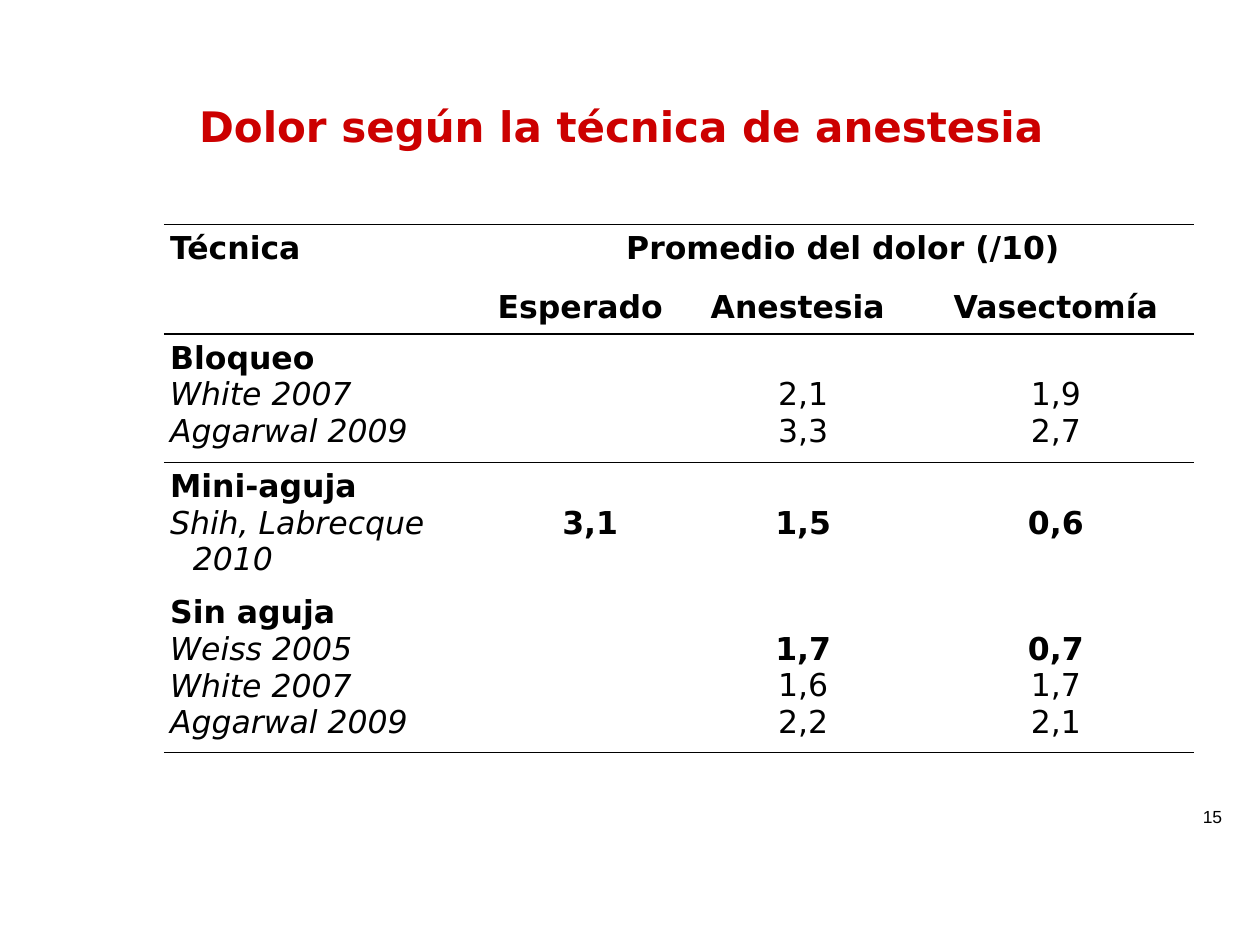
import pptx
import pptx.util
import pptx.dml.color
import pptx.enum.text
import pptx.oxml
import pptx.oxml.ns

Inches, Pt = pptx.util.Inches, pptx.util.Pt
ALIGN = pptx.enum.text.PP_ALIGN
ANCHOR = pptx.enum.text.MSO_ANCHOR

TITLE = "Dolor según la técnica de anestesia"
PAGE = "15"
COLORS = {"title": "CC0000", "text": "000000", "cell": "FFFFFF", "rule": "000000"}
FONT = "DejaVu Sans"
NO_STYLE = "{2D5ABB26-0587-4C30-8999-92F81FD0307C}"
PAD, HANG, LINE = 0.05, 0.18, 0.29

HEADS = [
    ["Técnica", "Promedio del dolor (/10)"],
    ["", "Esperado", "Anestesia ", "Vasectomía"],
]
# Technique, its studies, then the lists of expected, anesthesia and vasectomy
# scores; a star marks a bold score.
GROUPS = [
    ("Bloqueo", ["White 2007", "Aggarwal 2009"],
     [[], ["2,1", "3,3"], ["1,9", "2,7"]]),
    ("Mini-aguja", ["Shih, Labrecque 2010"],
     [["3,1*"], ["1,5*"], ["0,6*"]]),
    ("Sin aguja", ["Weiss 2005", "White 2007", "Aggarwal 2009"],
     [[], ["1,7*", "1,6", "2,2"], ["0,7*", "1,7", "2,1"]]),
]
COLS = [2.6, 1.57, 1.81, 2.2]
ROWS = [0.47, 0.4, 1.02, 1, 1.3]


def color(name):
    return pptx.dml.color.RGBColor.from_string(COLORS[name])


def pad(box):
    box.margin_left = box.margin_right = Inches(PAD)
    box.margin_top = box.margin_bottom = Inches(PAD)


def add_run(para, text, size, tint="text", face=FONT, bold=False, slant=False):
    run = para.add_run()
    run.text = text
    font = run.font
    font.name, font.size = face, Pt(size)
    font.bold, font.italic = bold, slant
    font.color.rgb = color(tint)


def fill_cell(cell, lines, align=ALIGN.CENTER):
    """Write (text, bold, italic) lines, each with a hanging indent."""
    frame = cell.text_frame
    for i, (text, bold, slant) in enumerate(lines):
        para = frame.add_paragraph() if i else frame.paragraphs[0]
        para.alignment = align
        props = para._p.get_or_add_pPr()
        props.set("marL", str(Inches(HANG)))
        props.set("indent", str(-Inches(HANG)))
        add_run(para, text, 18, bold=bold, slant=slant)


def add_rule(cell, side):
    """Draw a cell border; side is T or B."""
    line = pptx.oxml.parse_xml(
        f'<a:ln{side} {pptx.oxml.ns.nsdecls("a")} w="{Pt(1)}"><a:solidFill>'
        f'<a:srgbClr val="{COLORS["rule"]}"/></a:solidFill></a:ln{side}>')
    cell._tc.get_or_add_tcPr().insert(0, line)


def add_title(slide):
    title = slide.shapes.title
    title.left, title.top = Inches(1.53), Inches(0.42)
    title.width, title.height = Inches(7.72), Inches(0.83)
    frame = title.text_frame
    pad(frame)
    frame.vertical_anchor = ANCHOR.BOTTOM
    para = frame.paragraphs[0]
    para.alignment = ALIGN.LEFT
    add_run(para, TITLE, 24, "title", bold=True)


def add_page(slide):
    box = slide.shapes.add_textbox(
        Inches(9.46), Inches(6.35), Inches(0.29), Inches(0.27))
    frame = box.text_frame
    pad(frame)
    frame.word_wrap = False
    frame.auto_size = pptx.enum.text.MSO_AUTO_SIZE.SHAPE_TO_FIT_TEXT
    para = frame.paragraphs[0]
    para.alignment = ALIGN.RIGHT
    add_run(para, PAGE, 10, face="Arial")


def add_grid(slide):
    frame = slide.shapes.add_table(
        len(ROWS), len(COLS), Inches(1.3), Inches(1.78),
        Inches(sum(COLS)), Inches(sum(ROWS)))
    table = frame.table
    table._tbl.tblPr.find(pptx.oxml.ns.qn("a:tableStyleId")).text = NO_STYLE
    table.first_row = table.horz_banding = False
    for col, width in zip(table.columns, COLS):
        col.width = Inches(width)
    for row, height in zip(table.rows, ROWS):
        row.height = Inches(height)
    for cell in table.iter_cells():
        pad(cell)
        cell.fill.solid()
        cell.fill.fore_color.rgb = color("cell")
    for c in range(len(COLS)):
        for r, side in ((0, "T"), (1, "B"), (2, "T"), (len(ROWS) - 1, "B")):
            add_rule(table.cell(r, c), side)
    table.cell(0, 1).merge(table.cell(0, len(COLS) - 1))
    return table


def fill_grid(table):
    for r, heads in enumerate(HEADS):
        for c, text in enumerate(heads):
            if text:
                left = text in ("Técnica", "Esperado")
                fill_cell(table.cell(r, c), [(text, True, False)],
                          ALIGN.LEFT if left else ALIGN.CENTER)
    for r, (name, studies, scores) in enumerate(GROUPS, len(HEADS)):
        lines = [(name, True, False)] + [(s, False, True) for s in studies]
        fill_cell(table.cell(r, 0), lines, ALIGN.LEFT)
        for c, vals in enumerate(scores, 1):
            if vals:
                cell = table.cell(r, c)
                # Scores start one line down, level with the first study.
                cell.margin_top = Inches(PAD + LINE)
                fill_cell(cell, [(v.rstrip("*"), v.endswith("*"), False)
                                 for v in vals])


def main():
    deck = pptx.Presentation()
    deck.slide_width, deck.slide_height = Inches(10), Inches(7.5)
    slide = deck.slides.add_slide(deck.slide_layouts[5])
    add_page(slide)
    add_title(slide)
    fill_grid(add_grid(slide))
    deck.save("out.pptx")


if __name__ == "__main__":
    main()
